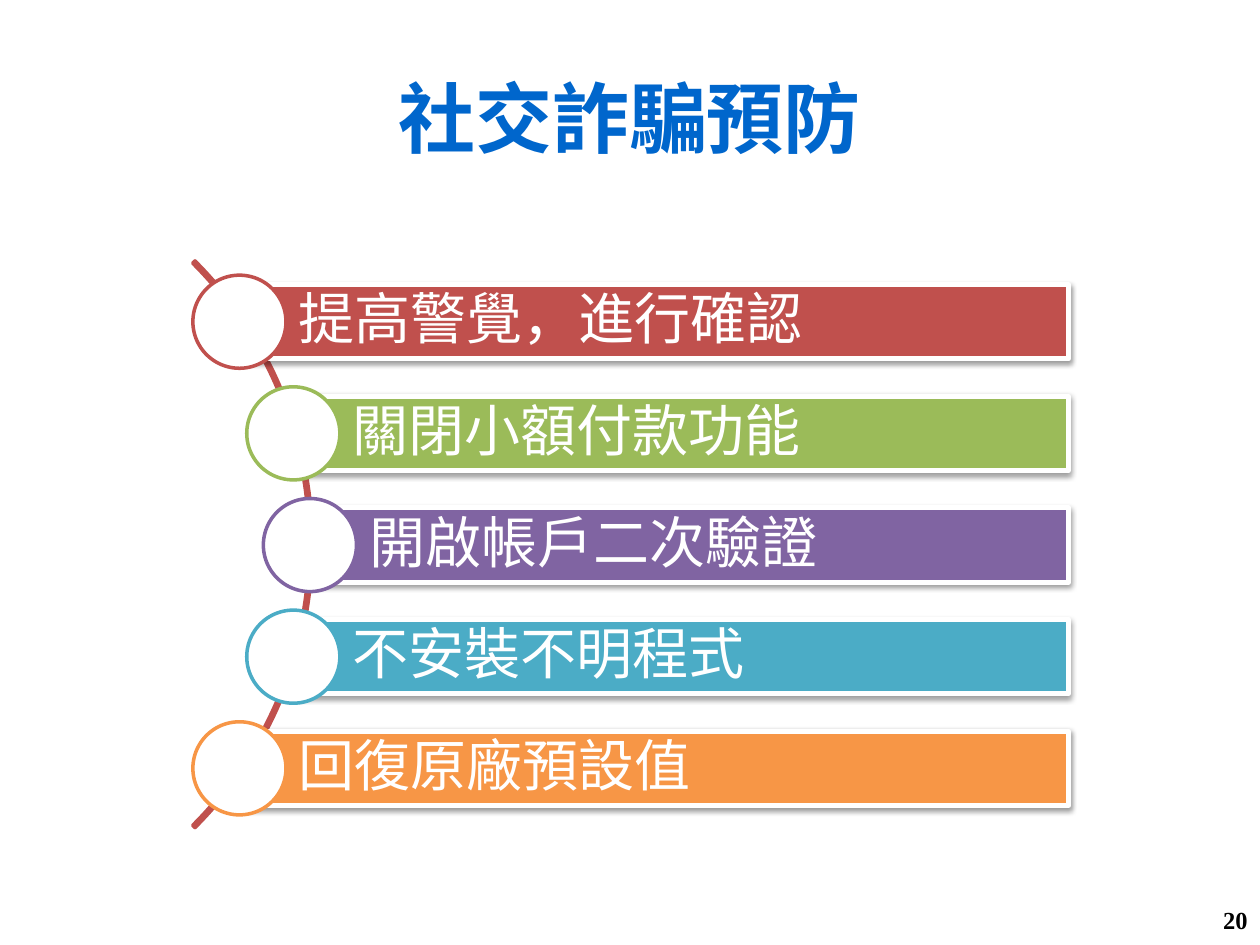
from lxml import etree
from pptx import Presentation
from pptx.dml.color import RGBColor
from pptx.enum import shapes, text
from pptx.oxml.ns import qn
from pptx.util import Pt


def rgb(code):
    return RGBColor.from_string(code)


def write(shape, words, size, color, align, bold=False):
    frame = shape.text_frame
    frame.text = words
    frame.word_wrap = True
    frame.vertical_anchor = text.MSO_ANCHOR.MIDDLE
    para = frame.paragraphs[0]
    para.alignment = align
    font = para.runs[0].font
    font.name, font.size, font.bold = "Times New Roman", Pt(size), bold
    font.color.rgb = rgb(color)
    return frame


prs = Presentation()
prs.slide_width, prs.slide_height = Pt(720), Pt(540)
slide = prs.slides.add_slide(prs.slide_layouts[6])
items = slide.shapes
kinds = shapes.MSO_SHAPE

# Title and page number
title = items.add_textbox(Pt(36), Pt(21.6), Pt(648), Pt(90))
write(title, "社交詐騙預防", 44, "0066CC", text.PP_ALIGN.CENTER, True)
page = items.add_textbox(Pt(552), Pt(511.2), Pt(168), Pt(28.8))
write(page, "20", 14, "000000", text.PP_ALIGN.RIGHT, True)

# Curve behind the rows
arc = items.add_shape(kinds.BLOCK_ARC, Pt(-279.4), Pt(82.1), Pt(457.9), Pt(457.9))
for i, value in enumerate((189, 27, 0.004)):
    arc.adjustments[i] = value
arc.shadow.inherit = False
arc.fill.background()
arc.line.color.rgb = rgb("C0504D")
arc.line.width = Pt(2)

# Rows: left edge, colour, wording
rows = [
    (136.8, "C0504D", "提高警覺，進行確認"),
    (167.6, "9BBB59", "關閉小額付款功能"),
    (177.1, "8064A2", "開啟帳戶二次驗證"),
    (167.6, "4BACC6", "不安裝不明程式"),
    (136.8, "F79646", "回復原廠預設值"),
]
right, top, step, high, dot = 610.6, 162.6, 63.8, 42.5, 53.2

for i, (left, color, words) in enumerate(rows):
    y = top + i * step

    # Bar with its label
    bar = items.add_shape(kinds.RECTANGLE, Pt(left), Pt(y), Pt(right - left), Pt(high))
    bar.fill.solid()
    bar.fill.fore_color.rgb = rgb(color)
    bar.line.color.rgb = rgb("FFFFFF")
    bar.line.width = Pt(3)
    frame = write(bar, words, 32, "FFFFFF", text.PP_ALIGN.LEFT)
    frame.margin_left = Pt(33.8)
    frame.margin_right = frame.margin_top = frame.margin_bottom = Pt(6.4)
    frame.paragraphs[0].line_spacing = 0.9

    # Soft shadow straight below the bar
    bar.shadow.inherit = False
    effect = bar._element.spPr.find(qn("a:effectLst"))
    shade = etree.SubElement(effect, qn("a:outerShdw"), blurRad=str(Pt(3.1)),
                             dist=str(Pt(1.6)), dir="5400000", rotWithShape="0")
    black = etree.SubElement(shade, qn("a:srgbClr"), val="000000")
    etree.SubElement(black, qn("a:alpha"), val="38000")

    # Circle centred on the bar's left end
    ring = items.add_shape(kinds.OVAL, Pt(left - dot / 2), Pt(y + (high - dot) / 2),
                           Pt(dot), Pt(dot))
    ring.shadow.inherit = False
    ring.fill.solid()
    ring.fill.fore_color.rgb = rgb("FFFFFF")
    ring.line.color.rgb = rgb(color)
    ring.line.width = Pt(2)

prs.save("out.pptx")
